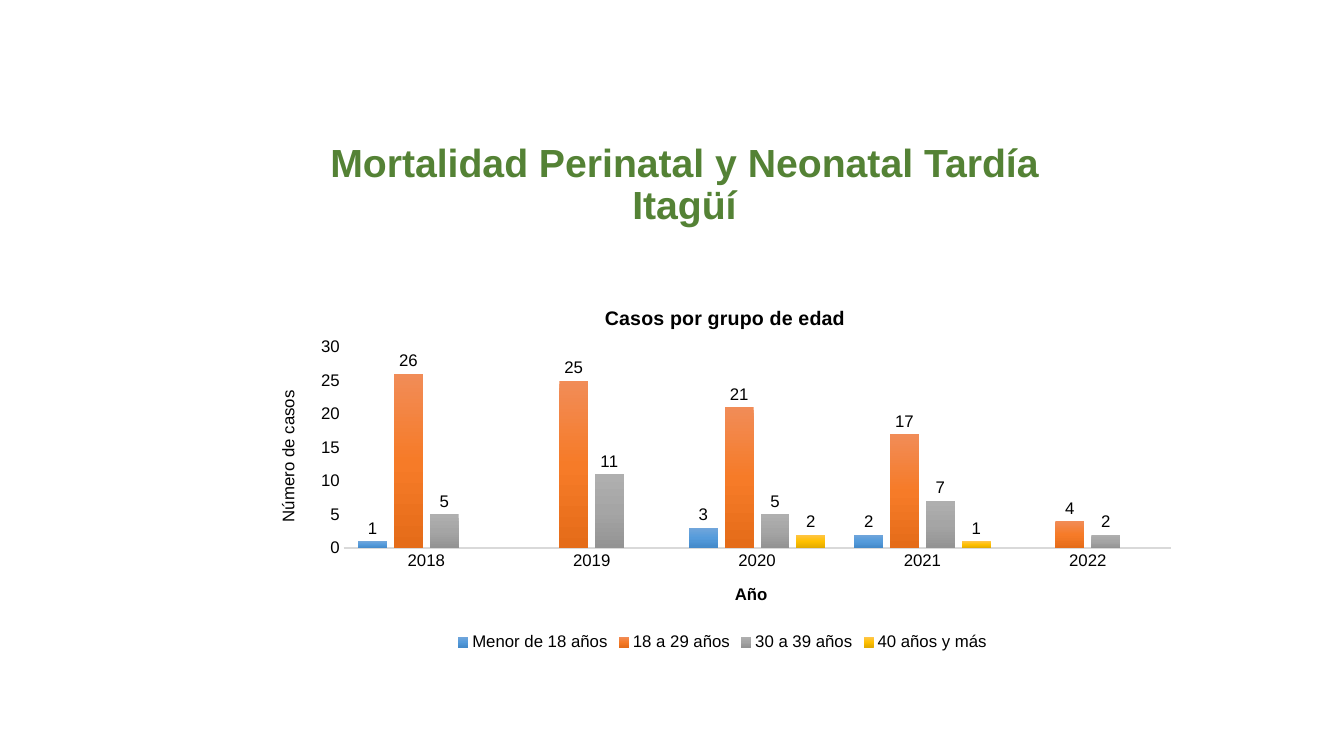
"""Builds the slide on perinatal and late neonatal mortality by age group."""
from dataclasses import dataclass
from typing import Any, Optional

from copy import deepcopy
from pptx import Presentation
from pptx.chart.data import CategoryChartData
from pptx.dml.color import RGBColor
from pptx.enum.chart import XL_CHART_TYPE as ChartType
from pptx.enum.chart import XL_LABEL_POSITION as LabelPosition
from pptx.enum.chart import XL_LEGEND_POSITION as LegendPosition
from pptx.enum.chart import XL_TICK_MARK as TickMark
from pptx.enum.text import MSO_ANCHOR as Anchor
from pptx.enum.text import PP_ALIGN as Align
from pptx.oxml.ns import qn
from pptx.oxml.xmlchemy import OxmlElement
from pptx.util import Cm, Pt

YEARS = ["2018", "2019", "2020", "2021", "2022"]
BODY_FORMAT = {"name": "Arial", "size": Pt(12), "bold": False}


@dataclass(frozen=True)
class AgeGroup:
    label: str
    cases: tuple[Optional[int], ...]
    shades: tuple[str, str, str]


@dataclass(frozen=True)
class Heading:
    owner: Any
    wording: str
    left: float
    top: float
    size: int = 12
    bold: bool = False


AGE_GROUPS = [
    AgeGroup("Menor de 18 años", (1, None, 3, 2, None), ("71A6DB", "559BDB", "448ACA")),
    AgeGroup("18 a 29 años", (26, 25, 21, 17, 4), ("F18C57", "F67B28", "E56C19")),
    AgeGroup("30 a 39 años", (5, 11, 5, 7, 2), ("AFAFAF", "A5A5A5", "939393")),
    AgeGroup("40 años y más", (None, None, 2, 1, None), ("FFC64B", "FFC000", "E3AB00")),
]


def colour(code: str) -> RGBColor:
    return RGBColor.from_string(code)


def apply(target: Any, values: dict[str, Any]) -> None:
    for key, value in values.items():
        setattr(target, key, value)


def style_font(font: Any, code: str = "000000", **changes: Any) -> None:
    apply(font, {**BODY_FORMAT, **changes})
    font.color.rgb = colour(code)


def place(parent: Any, **fractions: float) -> None:
    layout = parent.find(qn("c:layout"))
    if layout is None:
        layout = OxmlElement("c:layout")
        parent.insert(0 if parent.find(qn("c:tx")) is None else 1, layout)
    manual = OxmlElement("c:manualLayout")
    layout.append(manual)
    settings = {"xMode": "edge", "yMode": "edge", **fractions}
    if "w" in fractions:
        settings = {"layoutTarget": "inner", **settings}
    for key, value in settings.items():
        setting = OxmlElement(f"c:{key}")
        setting.set("val", str(value))
        manual.append(setting)


def add_heading(heading: Heading) -> Any:
    owner = heading.owner
    title = owner.chart_title if hasattr(owner, "chart_title") else owner.axis_title
    title.text_frame.text = heading.wording
    run = title.text_frame.paragraphs[0].runs[0]
    style_font(run.font, size=Pt(heading.size), bold=heading.bold)
    place(title._element, x=heading.left, y=heading.top)
    return title


def shade(series: Any, shades: tuple[str, str, str]) -> None:
    fill = series.format.fill
    fill.gradient()
    fill.gradient_angle = 270
    stops = series._element.find(".//" + qn("a:gsLst"))
    stops.append(deepcopy(stops[0]))
    for stop, position, code in zip(fill.gradient_stops, (0, 0.5, 1), shades):
        stop.position = position
        stop.color.rgb = colour(code)


def add_slide_title(slide: Any) -> None:
    frame = slide.shapes.add_textbox(Cm(3.94), Cm(3.33), Cm(26.62), Cm(2.54)).text_frame
    apply(frame, {"word_wrap": True, "vertical_anchor": Anchor.BOTTOM})
    paragraph = frame.paragraphs[0]
    paragraph.text = "Mortalidad Perinatal y Neonatal Tardía\vItagüí"
    apply(paragraph, {"alignment": Align.CENTER, "line_spacing": 0.9})
    style_font(paragraph.runs[0].font, "548235", size=Pt(28), bold=True)
    style_font(paragraph.runs[-1].font, "548235", size=Pt(28), bold=True)


def add_cases_chart(slide: Any) -> None:
    data = CategoryChartData()
    data.categories = YEARS
    for group in AGE_GROUPS:
        data.add_series(group.label, group.cases)
    chart = slide.shapes.add_chart(
        ChartType.COLUMN_CLUSTERED, Cm(6.45), Cm(7.14), Cm(23.52), Cm(9.37), data
    ).chart
    style_font(chart.font)
    year_axis, cases_axis = chart.category_axis, chart.value_axis

    add_heading(Heading(chart, "Casos por grupo de edad", 0.37, 0.05, 14, True))
    add_heading(Heading(year_axis, "Año", 0.51, 0.8, bold=True))
    cases_title = add_heading(Heading(cases_axis, "Número de casos", 0.02, 0.28))
    cases_title._element.find(".//" + qn("a:bodyPr")).set("rot", "-5400000")

    for axis in (year_axis, cases_axis):
        apply(axis, {"major_tick_mark": TickMark.NONE, "minor_tick_mark": TickMark.NONE,
                     "has_major_gridlines": False})
        style_font(axis.tick_labels.font)
    apply(cases_axis, {"minimum_scale": 0, "maximum_scale": 30, "major_unit": 5})
    cases_axis.format.line.fill.background()
    year_axis.format.line.color.rgb = colour("D9D9D9")
    year_axis.format.line.width = Pt(1)

    plot = chart.plots[0]
    apply(plot, {"gap_width": 100, "overlap": -24, "vary_by_categories": False})
    place(chart._chartSpace.chart.plotArea, x=0.094, y=0.172, w=0.886, h=0.54)
    for series, group in zip(plot.series, AGE_GROUPS):
        shade(series, group.shades)
        labels = series.data_labels
        apply(labels, {"show_value": True, "position": LabelPosition.OUTSIDE_END})
        style_font(labels.font)

    chart.has_legend = True
    apply(chart.legend, {"position": LegendPosition.BOTTOM, "include_in_layout": False})
    style_font(chart.legend.font)


def main() -> None:
    deck = Presentation()
    apply(deck, {"slide_width": Cm(33.87), "slide_height": Cm(19.05)})
    slide = deck.slides.add_slide(deck.slide_layouts[6])
    add_slide_title(slide)
    add_cases_chart(slide)
    deck.save("out.pptx")


if __name__ == "__main__":
    main()
